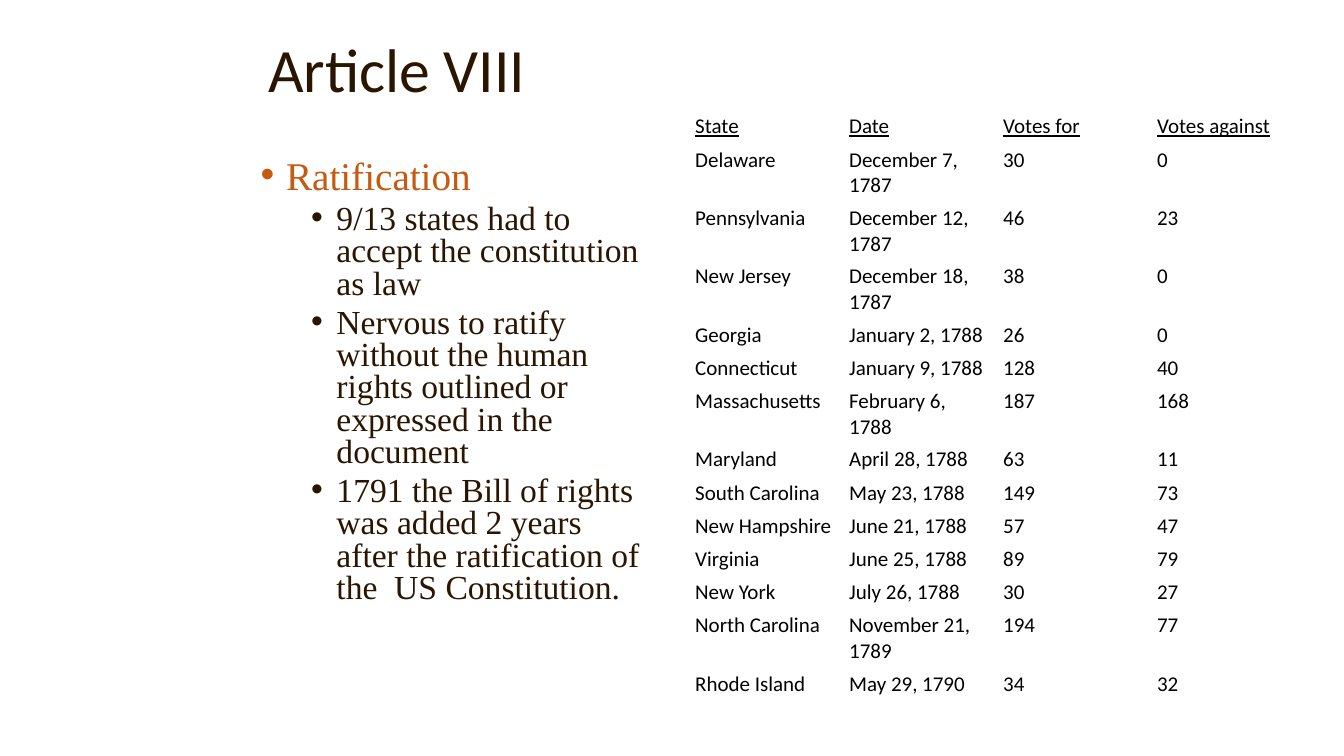
from lxml.etree import SubElement
from pptx import Presentation
from pptx.dml.color import RGBColor
from pptx.enum.text import MSO_ANCHOR, MSO_AUTO_SIZE, PP_ALIGN
from pptx.oxml.ns import qn
from pptx.util import Cm, Pt

COLORS = {"brown": "2A1500", "rust": "C55A11", "black": "000000", "white": "FFFFFF"}

POINTS = [
    (0, "Ratification"),
    (1, "9/13 states had to accept the constitution as law"),
    (1, "Nervous to ratify without the human rights outlined or expressed in the document"),
    (1, "1791 the Bill of rights was added 2 years after the ratification of the  US Constitution."),
]

VOTES = [
    ("State", "Date", "Votes for", "Votes against"),
    ("Delaware", "December 7, 1787", 30, 0),
    ("Pennsylvania", "December 12, 1787", 46, 23),
    ("New Jersey", "December 18, 1787", 38, 0),
    ("Georgia", "January 2, 1788", 26, 0),
    ("Connecticut", "January 9, 1788", 128, 40),
    ("Massachusetts", "February 6, 1788", 187, 168),
    ("Maryland", "April 28, 1788", 63, 11),
    ("South Carolina", "May 23, 1788", 149, 73),
    ("New Hampshire", "June 21, 1788", 57, 47),
    ("Virginia", "June 25, 1788", 89, 79),
    ("New York", "July 26, 1788", 30, 27),
    ("North Carolina", "November 21, 1789", 194, 77),
    ("Rhode Island", "May 29, 1790", 34, 32),
]


class Page:
    """Holds the fonts and the current slide, and adds elements to it."""

    sans = "Calibri"
    serif = "Times New Roman"

    def __init__(self, deck):
        self.slide = deck.slides.add_slide(deck.slide_layouts[5])

    def style(self, para, name, size, color):
        font = para.font
        font.name, font.size = name, Pt(size)
        font.color.rgb = RGBColor.from_string(COLORS[color])
        return font

    def title(self, text, left, top, width, height):
        shape = self.slide.shapes.title
        shape.left, shape.top = Cm(left), Cm(top)
        shape.width, shape.height = Cm(width), Cm(height)
        frame = shape.text_frame
        frame.text = text
        frame.auto_size = MSO_AUTO_SIZE.NONE
        frame.vertical_anchor = MSO_ANCHOR.MIDDLE
        para = frame.paragraphs[0]
        para.alignment = PP_ALIGN.LEFT
        para.line_spacing = 0.9
        self.style(para, self.sans, 44, "brown")

    def bullet(self, para, level):
        para.level = level
        props = para._p.get_or_add_pPr()
        props.set("marL", str(Cm(0.64 + 1.27 * level)))
        props.set("indent", str(-Cm(0.64)))
        SubElement(props, qn("a:buFont"), typeface="Arial")
        SubElement(props, qn("a:buChar"), char="•")

    def points(self, items, left, top, width, height):
        box = self.slide.shapes.add_textbox(Cm(left), Cm(top), Cm(width), Cm(height))
        frame = box.text_frame
        frame.word_wrap = True
        for pos, (level, text) in enumerate(items):
            para = frame.add_paragraph() if pos else frame.paragraphs[0]
            para.text = text
            self.bullet(para, level)
            para.line_spacing = 0.8
            para.space_before = Pt(5 if pos else 0)
            size, color = (24, "brown") if level else (28, "rust")
            self.style(para, self.serif, size, color)

    def table(self, rows, left, top, width, height):
        frame = self.slide.shapes.add_table(
            len(rows), len(rows[0]), Cm(left), Cm(top), Cm(width), Cm(height))
        grid = frame.table
        grid.first_row = grid.horz_banding = False
        for row, data in enumerate(rows):
            for col, value in enumerate(data):
                self.cell(grid.cell(row, col), str(value), row == 0)

    def cell(self, cell, text, head):
        cell.text = text
        cell.fill.solid()
        cell.fill.fore_color.rgb = RGBColor.from_string(COLORS["white"])
        cell.margin_left = cell.margin_right = Cm(0.2)
        cell.margin_top = cell.margin_bottom = Cm(0.1)
        font = self.style(cell.text_frame.paragraphs[0], self.sans, 15, "black")
        font.underline = head


def main():
    deck = Presentation()
    deck.slide_width, deck.slide_height = Cm(33.87), Cm(19.05)
    page = Page(deck)
    page.title("Article VIII", 6.5, 0, 24.94, 3.68)
    page.points(POINTS, 6.32, 3.91, 10.21, 12.09)
    page.table(VOTES, 17.32, 2.77, 15.52, 0.69 * len(VOTES))
    deck.save("out.pptx")


if __name__ == "__main__":
    main()
